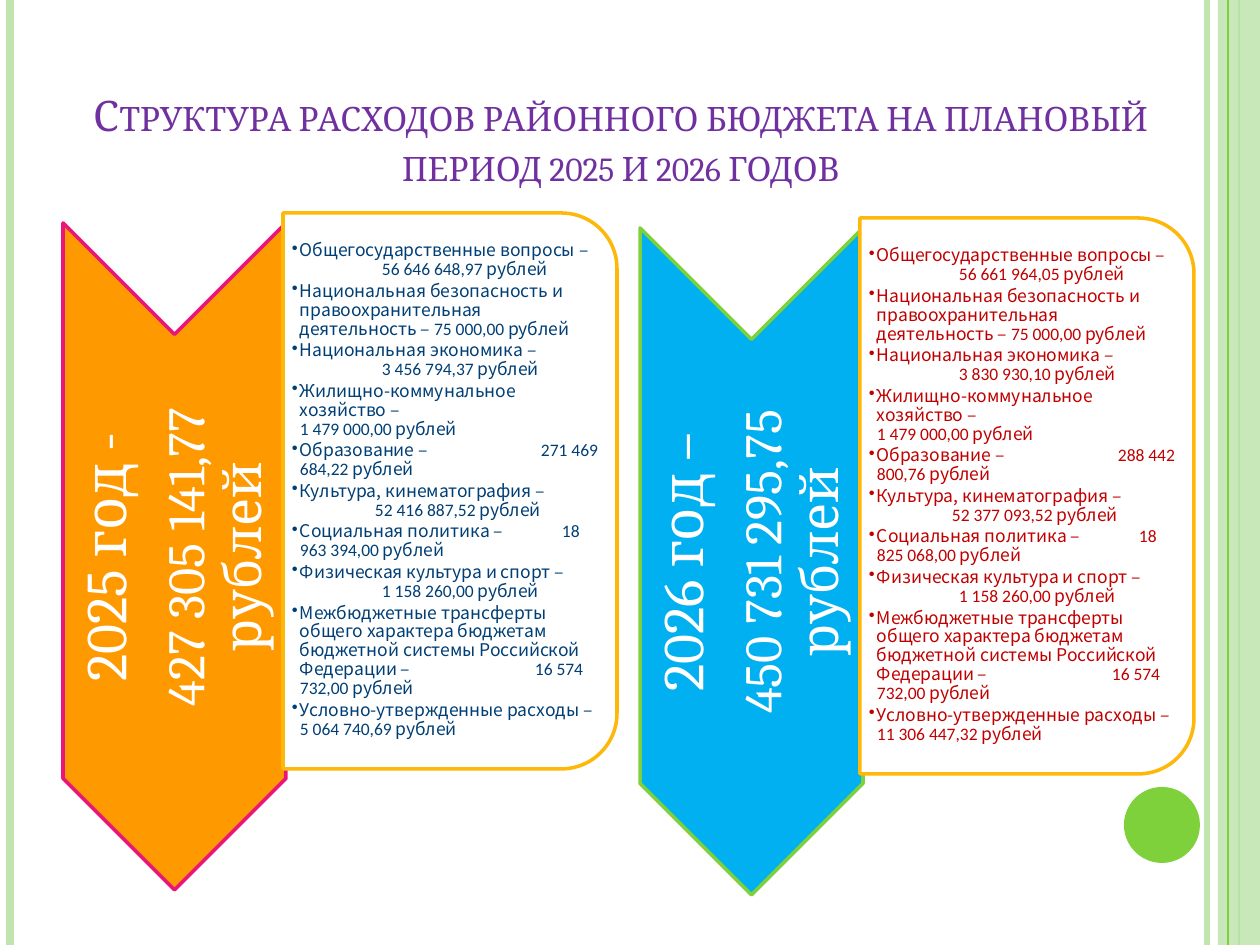
from lxml import etree
from pptx import Presentation
from pptx.dml.color import RGBColor
from pptx.enum.shapes import MSO_CONNECTOR, MSO_SHAPE
from pptx.enum.text import MSO_ANCHOR, MSO_AUTO_SIZE, PP_ALIGN
from pptx.oxml.ns import qn
from pptx.util import Emu, Pt

STRAIGHT = MSO_CONNECTOR.STRAIGHT
CHEVRON, PANEL = MSO_SHAPE.CHEVRON, MSO_SHAPE.ROUND_2_SAME_RECTANGLE
RECTANGLE, OVAL = MSO_SHAPE.RECTANGLE, MSO_SHAPE.OVAL
MIDDLE, CENTER, NO_FIT = MSO_ANCHOR.MIDDLE, PP_ALIGN.CENTER, MSO_AUTO_SIZE.NONE

SCALE = 914400 // 126
WIDTH, HEIGHT = 1260, 945
HEADING_FONT, LABEL_FONT, NUMBER_FONT = "Cambria", "Noto Sans CJK KR", "Calibri"

WHITE = RGBColor(0xFF, 0xFF, 0xFF)
GREEN = RGBColor(0x7F, 0xD1, 0x3B)
PALE_GREEN = RGBColor(0xC0, 0xE5, 0xAF)
PURPLE = RGBColor(0x70, 0x30, 0xA0)
ORANGE = RGBColor(0xFF, 0x99, 0x00)
PINK = RGBColor(0xEA, 0x15, 0x7A)
BLUE = RGBColor(0x00, 0xB0, 0xF0)
NAVY = RGBColor(0x00, 0x3F, 0x75)
RED = RGBColor(0xC0, 0x00, 0x00)
AMBER = RGBColor(0xFE, 0xB8, 0x0A)

# Content
TITLE = "Структура расходов районного бюджета на плановый период 2025 и 2026 годов"

# Expense item, amount on a new line, tab stop of the amount in px (0 for none)
ITEMS = [
    ("Общегосударственные вопросы –", True, 90),
    ("Национальная безопасность и правоохранительная деятельность –", False, 0),
    ("Национальная экономика –", True, 90),
    ("Жилищно-коммунальное хозяйство –", True, 0),
    ("Образование –", False, 249),
    ("Культура, кинематография –", True, 83),
    ("Социальная политика –", False, 270),
    ("Физическая культура и спорт –", True, 90),
    ("Межбюджетные трансферты общего характера бюджетам бюджетной системы "
     "Российской Федерации –", False, 243),
    ("Условно-утвержденные расходы –", True, 0),
]
YEARS = [
    {"year": "2025 год -", "total": "427 305 141,77 рублей",
     "fill": ORANGE, "line": PINK, "text": NAVY, "left": 63, "top": 223,
     "amounts": ["56 646 648,97", "75 000,00", "3 456 794,37", "1 479 000,00",
                 "271 469 684,22", "52 416 887,52", "18 963 394,00",
                 "1 158 260,00", "16 574 732,00", "5 064 740,69"]},
    {"year": "2026 год –", "total": "450 731 295,75 рублей",
     "fill": BLUE, "line": GREEN, "text": RED, "left": 640, "top": 228,
     "amounts": ["56 661 964,05", "75 000,00", "3 830 930,10", "1 479 000,00",
                 "288 442 800,76", "52 377 093,52", "18 825 068,00",
                 "1 158 260,00", "16 574 732,00", "11 306 447,32"]},
]
# Vertical rules: x, colour, width in points
RULES = [(1207, PALE_GREEN, 3), (10, PALE_GREEN, 4.5), (1239, GREEN, 1.5)]


def px(*lengths):
    return [Emu(length * SCALE) for length in lengths]


def add_rule(slide, x, color, width):
    rule = slide.shapes.add_connector(STRAIGHT, *px(x, 0, x, HEIGHT))
    rule.line.color.rgb = color
    rule.line.width = Pt(width)
    etree.SubElement(rule._element.spPr, qn("a:effectLst"))


def add_filled(slide, kind, box, fill, line=None):
    shape = slide.shapes.add_shape(kind, *px(*box))
    shape.shadow.inherit = False
    shape.fill.solid()
    shape.fill.fore_color.rgb = fill
    if line is None:
        shape.line.fill.background()
    else:
        shape.line.color.rgb = line
        shape.line.width = Pt(2)
    return shape


def add_turned(slide, kind, box, fill, line):
    """Add a shape turned by 90 degrees that covers the given box."""
    left, top, width, height = box
    shift = (width - height) // 2
    shape = add_filled(slide, kind, (left + shift, top - shift, height, width), fill, line)
    shape.rotation = 90


def add_text_frame(slide, box, insets):
    frame = slide.shapes.add_textbox(*px(*box)).text_frame
    frame.word_wrap = True
    frame.vertical_anchor = MIDDLE
    (frame.margin_left, frame.margin_top,
     frame.margin_right, frame.margin_bottom) = px(*insets)
    return frame


def add_para(frame, index, size, color, after):
    para = frame.add_paragraph() if index else frame.paragraphs[0]
    para.line_spacing = 0.9
    para.space_after = Pt(after)
    para.font.size = Pt(size)
    para.font.color.rgb = color
    return para


def add_span(para, text, font):
    span = para.add_run()
    span.text = text
    span.font.name = font


def set_bullet(para, tab_stop):
    properties = para._p.get_or_add_pPr()
    indent = 8 * SCALE
    properties.set("marL", str(indent))
    properties.set("indent", str(-indent))
    bullet = etree.Element(qn("a:buChar"), char="•")
    properties.find(qn("a:defRPr")).addprevious(bullet)
    if tab_stop:
        tabs = etree.Element(qn("a:tabLst"))
        etree.SubElement(tabs, qn("a:tab"), pos=str(tab_stop * SCALE), algn="l")
        bullet.addnext(tabs)


def add_year(slide, year):
    left, top = year["left"], year["top"]

    # Arrow with the year and its total
    add_turned(slide, CHEVRON, (left, top, 223, 667), year["fill"], year["line"])
    frame = add_text_frame(slide, (left, top + 112, 223, 444), (3, 3, 3, 3))
    frame._txBody.bodyPr.set("vert", "vert270")
    for index, (text, size, after) in enumerate([(year["year"], 33, 11.5),
                                                 (year["total"], 30, 10.5)]):
        para = add_para(frame, index, size, WHITE, after)
        para.alignment = CENTER
        para.font.name = HEADING_FONT
        para.add_run().text = text

    # Panel with the list of expenses
    add_turned(slide, PANEL, (left + 220, top - 10, 334, 556), WHITE, AMBER)
    frame = add_text_frame(slide, (left + 219, top + 6, 318, 523), (10, 1, 1, 1))
    for index, ((label, new_line, tab_stop), amount) in enumerate(zip(ITEMS, year["amounts"])):
        para = add_para(frame, index, 10, year["text"], 1.5)
        set_bullet(para, tab_stop)
        add_span(para, label if new_line or tab_stop else label + " ", LABEL_FONT)
        if new_line:
            para.add_line_break()
        add_span(para, ("\t" if tab_stop else "") + amount + " ", NUMBER_FONT)
        add_span(para, "рублей", LABEL_FONT)


def main():
    deck = Presentation()
    deck.slide_width, deck.slide_height = px(WIDTH, HEIGHT)
    slide = deck.slides.add_slide(deck.slide_layouts[5])

    # Side decoration
    for rule in RULES:
        add_rule(slide, *rule)
    band = add_filled(slide, RECTANGLE, (1218, 0, 42, HEIGHT), PALE_GREEN)
    color = band._element.spPr.find(qn("a:solidFill"))[0]
    etree.SubElement(color, qn("a:alpha"), val="87000")
    add_rule(slide, 1228, GREEN, 0.75)
    add_filled(slide, OVAL, (1124, 787, 76, 76), GREEN)

    # Title
    title = slide.shapes.title
    title.left, title.top, title.width, title.height = px(54, 66, 1134, 147)
    frame = title.text_frame
    frame.auto_size = NO_FIT
    frame.vertical_anchor = MIDDLE
    para = frame.paragraphs[0]
    para.alignment = CENTER
    para.font.name = HEADING_FONT
    para.font.size = Pt(24)
    para.font.color.rgb = PURPLE
    span = para.add_run()
    span.text = TITLE
    span._r.get_or_add_rPr().set("cap", "small")

    for year in YEARS:
        add_year(slide, year)
    deck.save("out.pptx")


if __name__ == "__main__":
    main()
